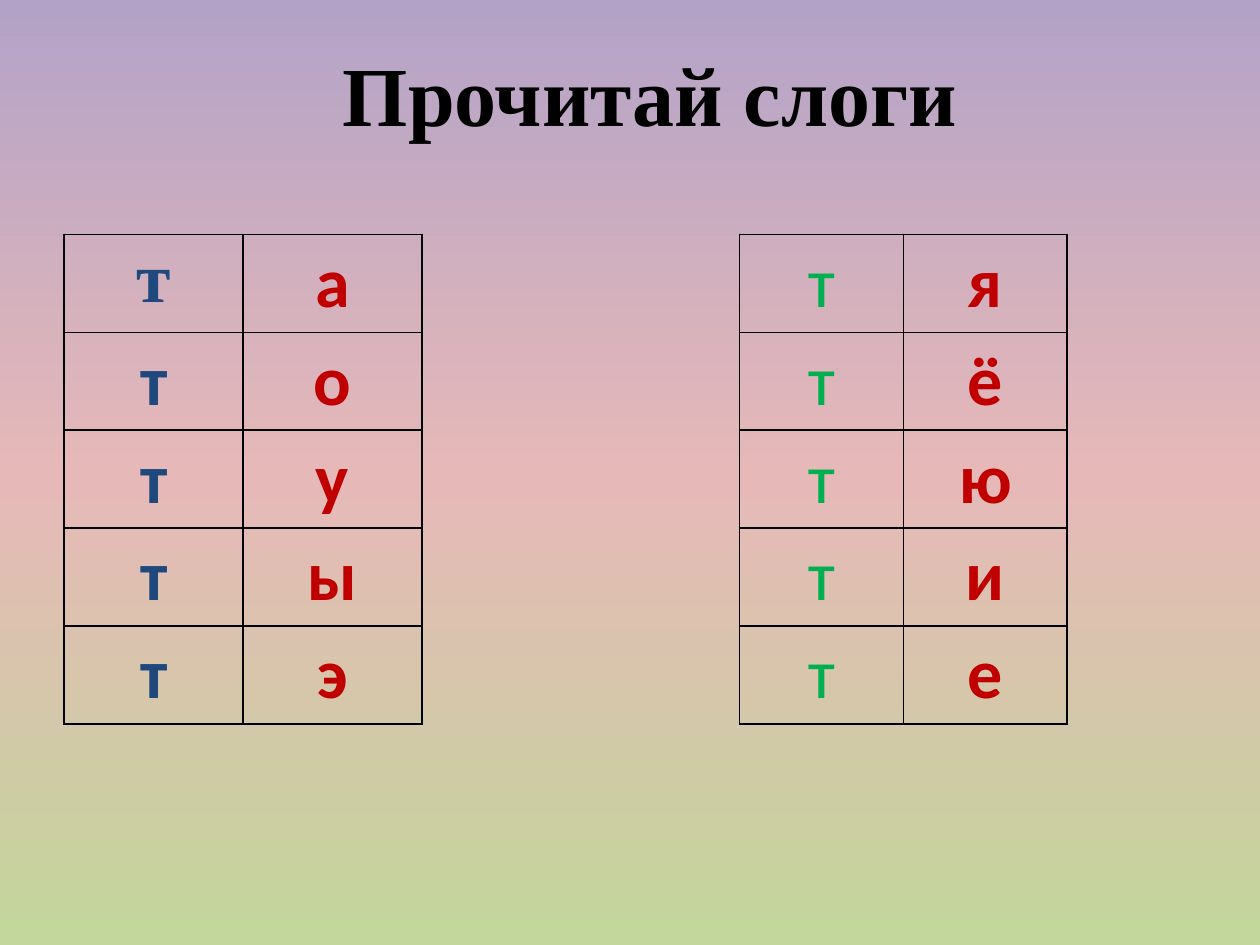
"""Build a slide with two syllable tables for reading practice."""
from lxml.etree import SubElement
from pptx import Presentation
from pptx.dml.color import RGBColor as Rgb
from pptx.enum.text import MSO_ANCHOR as Anchor, PP_ALIGN as Align
from pptx.oxml.ns import qn
from pptx.util import Inches, Pt

COLORS = {"black": "000000", "hard": "1F497D", "soft": "00B050", "vowel": "C00000"}
BACKGROUND = [(0, "B3A2C7"), (50, "E6B9B8"), (100, "C3D69B")]
TITLE = "Прочитай слоги"
CONSONANT = "т"
SYLLABLES = [
    {"vowels": "аоуыэ", "left": 0.51, "column": 1.42, "color": "hard",
     "bold": True, "first_font": "Times New Roman"},
    {"vowels": "яёюие", "left": 5.87, "column": 1.3, "color": "soft",
     "bold": False, "first_font": "Calibri"},
]
TABLE_TOP, ROW_HEIGHT = 1.86, 0.65


def add_text(frame, text, size, font, color, bold):
    paragraph = frame.paragraphs[0]
    paragraph.alignment = Align.CENTER
    run = paragraph.add_run()
    run.text = text
    run.font.size = Pt(size)
    run.font.name = font
    run.font.bold = bold
    run.font.color.rgb = Rgb.from_string(COLORS[color])


def add_color(parent, color):
    SubElement(parent, qn("a:srgbClr"), val=color)


def paint_background(slide):
    fill = slide.background.fill
    fill.gradient()
    fill.gradient_angle = 270
    stops = slide.element.find(".//" + qn("a:gsLst"))
    for stop in list(stops):
        stops.remove(stop)
    for position, color in BACKGROUND:
        add_color(SubElement(stops, qn("a:gs"), pos=str(position * 1000)), color)


def style_cell(cell):
    properties = cell._tc.get_or_add_tcPr()
    for side in ("lnL", "lnR", "lnT", "lnB"):
        border = SubElement(properties, qn("a:" + side), w=str(Pt(1)))
        add_color(SubElement(border, qn("a:solidFill")), COLORS["black"])
    cell.fill.background()


def add_syllables(slide, group):
    vowels = group["vowels"]
    table = slide.shapes.add_table(
        len(vowels), 2, Inches(group["left"]), Inches(TABLE_TOP),
        Inches(2 * group["column"]), Inches(ROW_HEIGHT * len(vowels))).table
    table.first_row = table.horz_banding = False
    for index, vowel in enumerate(vowels):
        consonant_font = "Calibri" if index else group["first_font"]
        consonant_cell, vowel_cell = table.rows[index].cells
        add_text(consonant_cell.text_frame, CONSONANT, 40, consonant_font,
                 group["color"], group["bold"])
        add_text(vowel_cell.text_frame, vowel, 40, "Calibri", "vowel", True)
        style_cell(consonant_cell)
        style_cell(vowel_cell)


def main():
    deck = Presentation()
    deck.slide_width, deck.slide_height = Inches(10), Inches(7.5)
    slide = deck.slides.add_slide(deck.slide_layouts[5])
    paint_background(slide)
    title = slide.shapes.title
    title.left, title.top = Inches(1.46), Inches(0.29)
    title.width, title.height = Inches(7.4), Inches(0.91)
    title.text_frame.vertical_anchor = Anchor.TOP
    add_text(title.text_frame, TITLE, 48, "Times New Roman", "black", True)
    for group in SYLLABLES:
        add_syllables(slide, group)
    deck.save("out.pptx")


if __name__ == "__main__":
    main()
